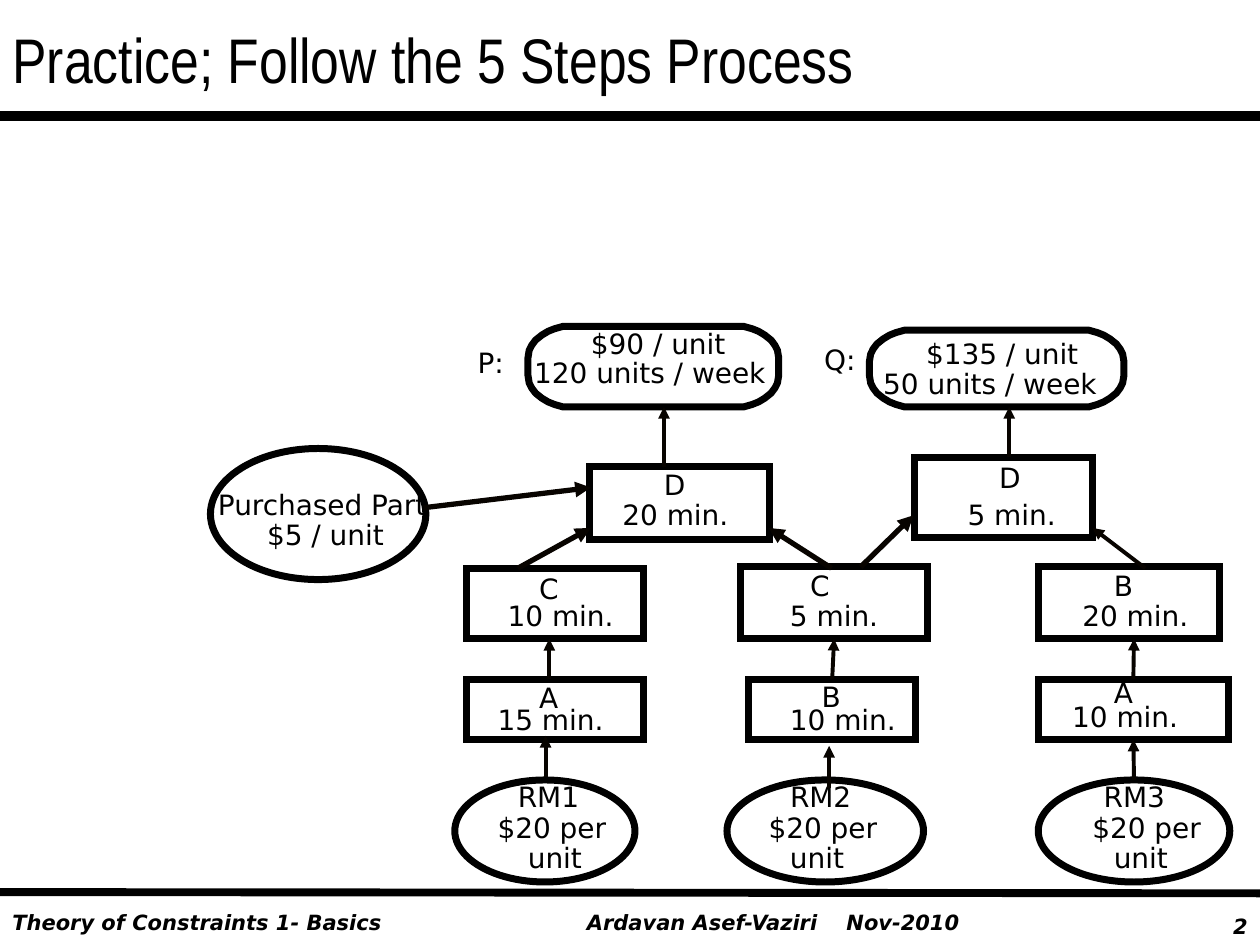
from dataclasses import dataclass
from typing import Optional

from lxml import etree
from pptx import Presentation
from pptx.dml.color import RGBColor
from pptx.enum.shapes import MSO_CONNECTOR, MSO_SHAPE
from pptx.enum.text import MSO_ANCHOR, MSO_AUTO_SIZE, PP_ALIGN
from pptx.oxml.ns import qn
from pptx.util import Inches, Pt

RECT, OVAL = MSO_SHAPE.RECTANGLE, MSO_SHAPE.OVAL
LINE = MSO_CONNECTOR.STRAIGHT
LEFT, RIGHT = PP_ALIGN.LEFT, PP_ALIGN.RIGHT
MIDDLE = MSO_ANCHOR.MIDDLE
GROW = MSO_AUTO_SIZE.SHAPE_TO_FIT_TEXT
TOP, BASE = 0, 2  # connection sites


@dataclass(frozen=True)
class Theme:
    ink: RGBColor = RGBColor(0, 0, 0)
    arrow: RGBColor = RGBColor(0x08, 0x04, 0x00)
    head: str = "Arial Narrow"
    body: str = "DejaVu Sans"
    title: float = 36
    label: float = 16
    foot: float = 12
    edge: float = 4
    thin: float = 2.25
    thick: float = 3


@dataclass(frozen=True)
class Label:
    text: str
    left: float
    top: float
    width: float
    height: float = 0.27
    space: Optional[float] = None


@dataclass(frozen=True)
class Node:
    form: Optional[MSO_SHAPE]  # None is a pill
    left: float
    top: float
    width: float
    height: float
    labels: tuple[Label, ...]


@dataclass(frozen=True)
class Arrow:
    x1: float
    y1: float
    x2: float
    y2: float
    weight: float
    start: Optional[str] = None
    end: Optional[str] = None


THEME = Theme()

NODES = {
    # Products
    "P": Node(None, 4.19, 2.59, 1.99, 0.64, (
        Label("$90 / unit", 4.69, 2.59, 1.12),
        Label("120 units / week", 4.24, 2.82, 1.9))),
    "Q": Node(None, 6.9, 2.62, 2.02, 0.61, (
        Label("$135 / unit", 7.35, 2.67, 1.26),
        Label("50 units / week", 7.01, 2.91, 1.76))),
    # Final steps
    "part": Node(OVAL, 1.67, 3.56, 1.71, 1.04, (
        Label("Purchased Part", 1.73, 3.87, 1.69),
        Label("$5 / unit", 2.12, 4.11, 0.98))),
    "D1": Node(RECT, 4.68, 3.7, 1.43, 0.58, (
        Label("D", 5.27, 3.71, 0.17), Label("20 min.", 4.94, 3.95, 0.87))),
    "D2": Node(RECT, 7.26, 3.63, 1.41, 0.64, (
        Label("D", 7.93, 3.71, 0.17, 0.22, 0.8),
        Label("5 min.", 7.68, 3.95, 0.73))),
    # Second steps
    "C1": Node(RECT, 3.7, 4.51, 1.41, 0.56, (
        Label("C", 4.28, 4.59, 0.16, 0.22, 0.8),
        Label("10 min.", 4.03, 4.75, 0.87))),
    "C2": Node(RECT, 5.88, 4.5, 1.48, 0.57, (
        Label("C", 6.43, 4.51, 0.16), Label("5 min.", 6.27, 4.75, 0.73))),
    "B3": Node(RECT, 8.24, 4.5, 1.44, 0.57, (
        Label("B", 8.84, 4.51, 0.15), Label("20 min.", 8.59, 4.75, 0.87))),
    # First steps
    "A1": Node(RECT, 3.7, 5.39, 1.41, 0.48, (
        Label("A", 4.28, 5.47, 0.16, 0.19, 0.7),
        Label("15 min.", 3.95, 5.55, 0.87, 0.3, 1.1))),
    "B2": Node(RECT, 5.94, 5.39, 1.33, 0.48, (
        Label("B", 6.52, 5.31, 0.15, 0.35, 1.3),
        Label("10 min.", 6.27, 5.55, 0.87, 0.3, 1.1))),
    "A3": Node(RECT, 8.24, 5.39, 1.51, 0.48, (
        Label("A", 8.84, 5.39, 0.15, 0.24, 0.9),
        Label("10 min.", 8.51, 5.55, 0.87))),
}

# Raw materials: left, width, then the left of each text line
for num, (left, width, *cols) in enumerate((
        (3.61, 1.43, 4.11, 3.95, 4.19),
        (5.77, 1.56, 6.27, 6.1, 6.27),
        (8.24, 1.52, 8.76, 8.67, 8.84)), 1):
    words = ((f"RM{num}", 0.49), ("$20 per", 0.87), ("unit", 0.43))
    NODES[f"RM{num}"] = Node(OVAL, left, 6.19, width, 0.81, tuple(
        Label(text, x, 6.19 + 0.24 * row, wide)
        for row, ((text, wide), x) in enumerate(zip(words, cols))))

ARROWS = (
    Arrow(5.27, 3.71, 5.27, 3.23, THEME.thin),
    Arrow(8.01, 3.63, 8.01, 3.23, THEME.thin),
    Arrow(3.36, 4.03, 4.69, 3.87, THEME.thick),
    Arrow(4.11, 4.51, 4.69, 4.19, THEME.thick),
    Arrow(6.6, 4.51, 6.1, 4.19, THEME.thick),
    Arrow(6.83, 4.5, 7.25, 4.09, THEME.thick),
    Arrow(9.09, 4.51, 8.67, 4.19, THEME.thin),
    Arrow(4.36, 5.39, 4.36, 5.07, THEME.thin),
    Arrow(6.6, 5.39, 6.6, 5.07, THEME.thin, "B2", "C2"),
    Arrow(9, 5.39, 9, 5.07, THEME.thin, "A3"),
    Arrow(4.33, 6.17, 4.33, 5.84, THEME.thin),
    Arrow(6.58, 6.25, 6.58, 5.92, THEME.thin),
    Arrow(9, 6.19, 9, 5.87, THEME.thin, "RM3", "A3"),
)

# Steps of a pill corner, measured inward from the box corner
CURVE = ((0.35, 0), (0.28, 0), (0.21, 0.02), (0.16, 0.04), (0.11, 0.07),
         (0.06, 0.11), (0.03, 0.15), (0.01, 0.19), (0, 0.25))


def add_text(slide, item: Label, size: float = THEME.label):
    box = slide.shapes.add_textbox(*map(
        Inches, (item.left, item.top, item.width, item.height)))
    frame = box.text_frame
    frame.text = item.text
    frame.word_wrap = False
    frame.auto_size = GROW
    frame.margin_left = frame.margin_right = 0
    frame.margin_top = frame.margin_bottom = 0
    para = frame.paragraphs[0]
    if item.space:
        para.line_spacing = item.space
    font = para.runs[0].font
    font.name, font.size = THEME.body, Pt(size)
    font.color.rgb = THEME.ink
    return box


def add_foot(slide, item: Label, align=LEFT, tab: float = 0) -> None:
    frame = add_text(slide, item, THEME.foot).text_frame
    frame.word_wrap = True
    frame.margin_left = frame.margin_right = Inches(0.1)
    frame.margin_top = frame.margin_bottom = Inches(0.05)
    para = frame.paragraphs[0]
    para.alignment = align
    if tab:
        stops = etree.SubElement(para._p.get_or_add_pPr(), qn("a:tabLst"))
        etree.SubElement(stops, qn("a:tab"), pos=str(Inches(tab)), algn="l")
    for run in para.runs:
        run.font.bold = run.font.italic = True


def add_pill(slide, node: Node):
    right, base = node.left + node.width, node.top + node.height
    nw = [(node.left + x, node.top + y) for x, y in CURVE]
    sw = [(node.left + x, base - y) for x, y in reversed(CURVE)]
    se = [(right - x, base - y) for x, y in CURVE]
    ne = [(right - x, node.top + y) for x, y in reversed(CURVE)]
    first, *rest = [(Inches(x), Inches(y)) for x, y in nw + sw + se + ne]
    pen = slide.shapes.build_freeform(*first)
    pen.add_line_segments(rest, close=True)
    return pen.convert_to_shape()


def add_node(slide, node: Node):
    if node.form is None:
        shape = add_pill(slide, node)
    else:
        shape = slide.shapes.add_shape(node.form, *map(
            Inches, (node.left, node.top, node.width, node.height)))
    shape.shadow.inherit = False
    shape.fill.background()
    shape.line.color.rgb = THEME.ink
    shape.line.width = Pt(THEME.edge)
    if node.form == RECT:
        etree.SubElement(shape.line._get_or_add_ln(), qn("a:miter"), lim="800000")
    for item in node.labels:
        add_text(slide, item)
    return shape


def add_line(slide, ends: tuple, color: RGBColor, weight: float):
    line = slide.shapes.add_connector(LINE, *map(Inches, ends))
    line.line.color.rgb = color
    line.line.width = Pt(weight)
    etree.SubElement(line._element.spPr, qn("a:effectLst"))
    return line


def add_arrow(slide, item: Arrow, shapes: dict) -> None:
    ends = (item.x1, item.y1, item.x2, item.y2)
    line = add_line(slide, ends, THEME.arrow, item.weight)
    etree.SubElement(line.line._get_or_add_ln(), qn("a:tailEnd"), type="triangle")
    if item.start:
        line.begin_connect(shapes[item.start], TOP)
    if item.end:
        line.end_connect(shapes[item.end], BASE)


def add_title(slide, text: str) -> None:
    title = slide.shapes.title
    title.left, title.top, title.width, title.height = map(
        Inches, (0, 0, 10, 0.92))
    frame = title.text_frame
    frame.text = text
    frame.vertical_anchor = MIDDLE
    para = frame.paragraphs[0]
    para.alignment = LEFT
    font = para.runs[0].font
    font.name, font.size = THEME.head, Pt(THEME.title)
    font.color.rgb = THEME.ink


def main() -> None:
    deck = Presentation()
    deck.slide_width, deck.slide_height = Inches(10), Inches(7.5)
    slide = deck.slides.add_slide(deck.slide_layouts[5])

    # Title, rules and footer
    add_title(slide, "Practice; Follow the 5 Steps Process")
    add_line(slide, (0, 0.92, 10, 0.92), THEME.ink, 6)
    add_line(slide, (0, 7.08, 10, 7.09), THEME.ink, 4.5)
    add_foot(slide, Label("Theory of Constraints 1- Basics", 0, 7.17, 4.67, 0.3))
    add_foot(slide, Label("Ardavan Asef-Vaziri\tNov-2010", 4.56, 7.17, 3.35, 0.3),
             tab=2.06)
    add_foot(slide, Label("2", 9.25, 7.2, 0.75, 0.3), RIGHT)

    # Process flow
    shapes = {name: add_node(slide, node) for name, node in NODES.items()}
    add_text(slide, Label("P:", 3.79, 2.74, 0.24))
    add_text(slide, Label("Q:", 6.54, 2.72, 0.28))
    for item in ARROWS:
        add_arrow(slide, item, shapes)

    deck.save("out.pptx")


if __name__ == "__main__":
    main()
